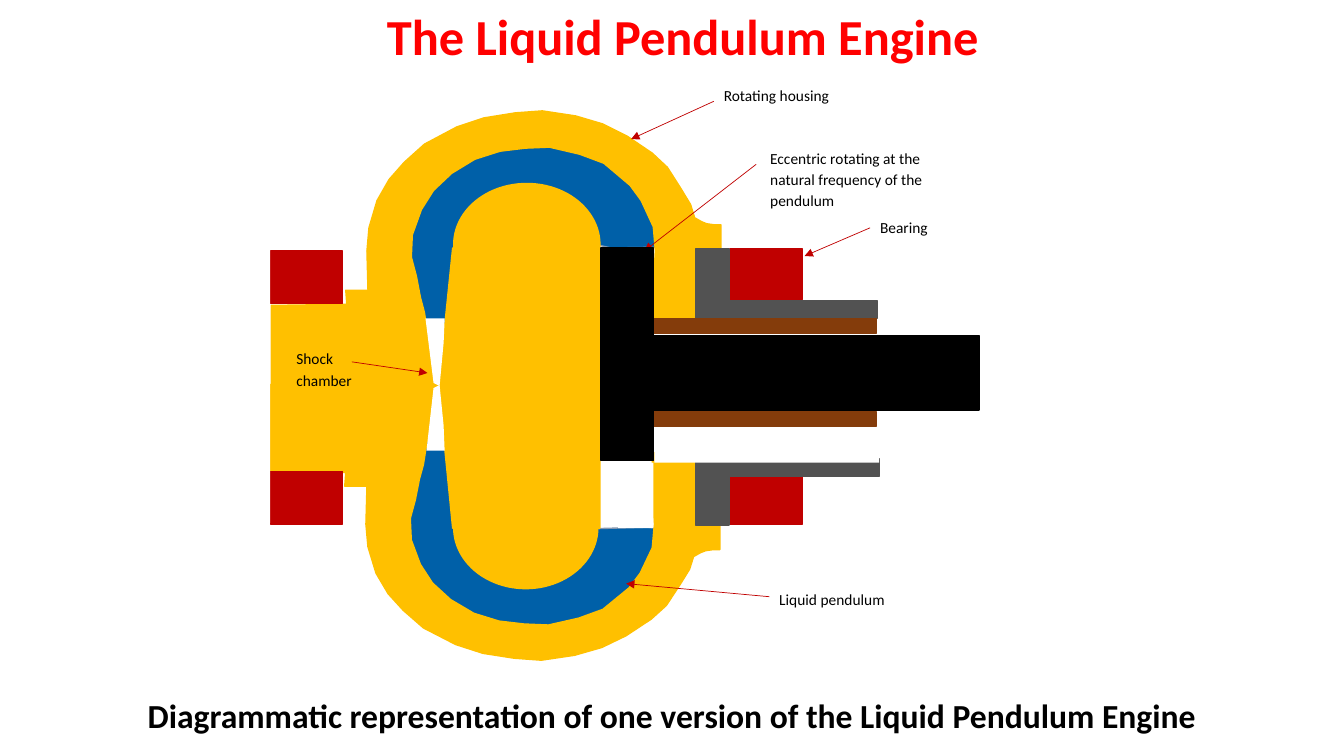
from dataclasses import dataclass

from lxml import etree
from pptx import Presentation
from pptx.dml.color import RGBColor
from pptx.enum.shapes import MSO_CONNECTOR, MSO_SHAPE
from pptx.enum.text import MSO_ANCHOR, MSO_AUTO_SIZE, PP_ALIGN
from pptx.oxml.ns import qn
from pptx.util import Inches, Pt

RECTANGLE, OVAL = MSO_SHAPE.RECTANGLE, MSO_SHAPE.OVAL
STRAIGHT = MSO_CONNECTOR.STRAIGHT
TOP, FIT = MSO_ANCHOR.TOP, MSO_AUTO_SIZE.SHAPE_TO_FIT_TEXT
LEFT, CENTER = PP_ALIGN.LEFT, PP_ALIGN.CENTER
SLIDE_COLUMNS, SLIDE_ROWS = 13.33, 7.5
LEFT_SIDE = 1
FONT = "Calibri"
COLORS = {
    "housing": "FFC000", "liquid": "0060A8", "liquid edge": "8497B0",
    "bearing": "C00000", "sleeve": "525252", "bush": "843C0B",
    "shaft": "000000", "gap": "FFFFFF", "pointer": "C00000",
    "text": "000000", "title": "FF0000",
}

LIQUID = [
    (4.69, 2.45), (4.34, 1.61), (3.14, 1.25), (2.22, 1.56), (1.87, 2.59),
    (2.08, 3.54), (2.12, 4.16), (1.87, 4.9), (1.99, 5.76), (2.69, 6.33),
    (3.73, 6.44), (4.38, 6.01), (4.73, 5.34), (4.63, 5.25), (4.42, 5.23),
    (3.73, 5.25), (2.99, 5.25), (2.91, 4.55), (2.91, 3.59), (3.03, 2.61),
    (3.14, 2.1), (3.5, 2.04), (3.83, 2.27), (3.93, 2.43), (4.06, 2.46),
]
UPPER_HOUSING = [
    (0.69, 3.03), (1.44, 3.02), (1.43, 2.88), (1.65, 2.88), (1.64, 2.49),
    (1.66, 2.26), (1.74, 1.99), (1.86, 1.78), (2.01, 1.61), (2.21, 1.43),
    (2.53, 1.26), (2.8, 1.17), (3.11, 1.12), (3.38, 1.1), (3.71, 1.15),
    (3.98, 1.23), (4.22, 1.35), (4.47, 1.52), (4.62, 1.66), (4.76, 1.88),
    (4.85, 2.03), (4.89, 2.16), (4.96, 2.2), (5.01, 2.22), (5.08, 2.23),
    (5.15, 2.23), (5.15, 2.51), (4.94, 2.51), (4.95, 3.22), (4.48, 3.22),
    (4.48, 2.85), (4.5, 2.49), (4.48, 2.25), (4.36, 1.99), (4.25, 1.84),
    (3.99, 1.62), (3.75, 1.53), (3.45, 1.46), (3.21, 1.47), (2.96, 1.5),
    (2.71, 1.58), (2.48, 1.72), (2.3, 1.89), (2.18, 2.08), (2.09, 2.33),
    (2.08, 2.55), (2.13, 2.74), (2.17, 2.95), (2.21, 3.1), (2.25, 3.36),
    (2.35, 3.92), (0.69, 3.92),
]
LOWER_HOUSING = [(x - 0.01, 6.55 - (y - 1.1) * 0.97) for x, y in UPPER_HOUSING]
CORE = [(2.49, 2.46), (3.95, 2.46), (3.95, 5.24), (2.49, 5.24), (2.35, 3.83)]
UPPER_SHOCK_GAP = [(2.22, 3.16), (2.41, 3.16), (2.4, 3.4), (2.36, 3.83), (2.3, 3.8)]
LOWER_SHOCK_GAP = [(2.23, 4.47), (2.41, 4.47), (2.4, 4.22), (2.36, 3.82), (2.3, 3.85)]

ROTOR_PARTS = [
    (RECTANGLE, "bearing", 0.68, 2.49, 0.72, 0.52),
    (RECTANGLE, "bearing", 0.68, 4.68, 0.72, 0.52),
    (RECTANGLE, "bearing", 5.24, 2.47, 0.72, 0.5),
    (RECTANGLE, "bearing", 5.24, 4.7, 0.72, 0.5),
    (OVAL, "housing", 2.5, 1.82, 1.45, 1.21),
    (OVAL, "housing", 2.5, 4.63, 1.43, 1.21),
    (RECTANGLE, "sleeve", 4.9, 2.47, 0.33, 0.69),
    (RECTANGLE, "sleeve", 4.9, 4.55, 0.33, 0.66),
    (RECTANGLE, "sleeve", 5.18, 2.98, 1.52, 0.18),
    (RECTANGLE, "sleeve", 5.2, 4.55, 1.52, 0.18),
    (RECTANGLE, "bush", 4.43, 3.16, 2.26, 0.15),
    (RECTANGLE, "bush", 4.43, 4.08, 2.26, 0.15),
]
SHAFT_PARTS = [
    (RECTANGLE, "shaft", 3.96, 2.46, 0.52, 2.11),
    (RECTANGLE, "shaft", 4.41, 3.33, 3.3, 0.74),
]
GAPS = [(4.13, 4.59, 0.35, 0.65), (4.49, 4.26, 2.23, 0.33), (0.59, 2.44, 0.09, 2.75)]
OUTER_LABELS = [
    ("Bearing", (6.63, 2.09, 1.87, 0.34), None, (5.98, 2.54)),
    ("Eccentric rotating at the natural frequency of the pendulum",
     (5.54, 1.4, 2.08, 0.65), (5.5, 1.63), (4.39, 2.49)),
    ("Liquid pendulum", (5.63, 5.78, 2.34, 0.57), (5.63, 5.92), (4.21, 5.79)),
    ("Rotating housing", (5.08, 0.78, 3.02, 0.45), None, (4.26, 1.38)),
]
SHOCK_LABEL = ("Shock chamber", (0.84, 3.39, 0.91, 0.48), (1.49, 3.59), (2.24, 3.7))


@dataclass
class Region:
    left: float
    top: float
    columns: float
    rows: float

    def point(self, column, row):
        return Inches(self.left + column), Inches(self.top + row)

    def area(self, column, row, columns, rows):
        return *self.point(column, row), Inches(columns), Inches(rows)


def rgb(name):
    return RGBColor.from_string(COLORS[name])


def paint(part, fill, edge=None):
    part.shadow.inherit = False
    part.fill.solid()
    part.fill.fore_color.rgb = rgb(fill)
    if edge:
        part.line.color.rgb = rgb(edge)
        part.line.width = Pt(1)
    else:
        part.line.fill.background()


def add_outline(slide, region, points, fill, edge=None):
    start, *rest = [region.point(*point) for point in points]
    builder = slide.shapes.build_freeform(*start)
    builder.add_line_segments(rest, close=True)
    paint(builder.convert_to_shape(), fill, edge)


def add_parts(slide, region, parts):
    for kind, color, *area in parts:
        paint(slide.shapes.add_shape(kind, *region.area(*area)), color, color)


def add_text(slide, area, wording, size, color, align, bold=False):
    caption = slide.shapes.add_textbox(*area)
    frame = caption.text_frame
    frame.word_wrap = True
    frame.vertical_anchor = TOP
    frame.text = wording
    paragraph = frame.paragraphs[0]
    paragraph.alignment = align
    font = paragraph.runs[0].font
    font.name, font.size, font.bold = FONT, Pt(size), bold
    font.color.rgb = rgb(color)
    return caption


def add_label(slide, region, wording, area, start, tip):
    label = add_text(slide, region.area(*area), wording, 11, "text", LEFT)
    paragraph = label.text_frame.paragraphs[0]
    paragraph.line_spacing = 1.15
    paragraph.space_after = Pt(10)
    origin = start or area[:2]
    pointer = slide.shapes.add_connector(
        STRAIGHT, *region.point(*origin), *region.point(*tip))
    if start is None:
        pointer.begin_connect(label, LEFT_SIDE)
    pointer.line.color.rgb = rgb("pointer")
    pointer.line.width = Pt(0.5)
    etree.SubElement(pointer.line._get_or_add_ln(), qn("a:tailEnd"), type="triangle")
    etree.SubElement(pointer._element.spPr, qn("a:effectLst"))


def draw_engine(slide, region):
    add_outline(slide, region, LIQUID, "liquid", "liquid edge")
    for half in (UPPER_HOUSING, LOWER_HOUSING):
        add_outline(slide, region, half, "housing", "housing")
    add_parts(slide, region, ROTOR_PARTS)
    for label in OUTER_LABELS:
        add_label(slide, region, *label)
    add_outline(slide, region, CORE, "housing", "housing")
    add_parts(slide, region, SHAFT_PARTS)
    for gap in GAPS:
        paint(slide.shapes.add_shape(RECTANGLE, *region.area(*gap)), "gap")
    for gap in (UPPER_SHOCK_GAP, LOWER_SHOCK_GAP):
        add_outline(slide, region, gap, "gap")
    add_label(slide, region, *SHOCK_LABEL)


def draw_heading(slide, region, wording, size, color):
    area = region.area(0, 0, region.columns, region.rows)
    heading = add_text(slide, area, wording, size, color, CENTER, bold=True)
    heading.text_frame.auto_size = FIT


def main():
    deck = Presentation()
    deck.slide_width, deck.slide_height = Inches(SLIDE_COLUMNS), Inches(SLIDE_ROWS)
    slide = deck.slides.add_slide(deck.slide_layouts[6])
    draw_engine(slide, Region(2, 0, 8, 6.84))
    draw_heading(slide, Region(2.31, 0, 8.93, 0.71),
                 "The Liquid Pendulum Engine", 36, "title")
    draw_heading(slide, Region(0, 6.84, SLIDE_COLUMNS, 0.5),
                 "Diagrammatic representation of one version of the Liquid Pendulum Engine",
                 24, "text")
    deck.save("out.pptx")


if __name__ == "__main__":
    main()
